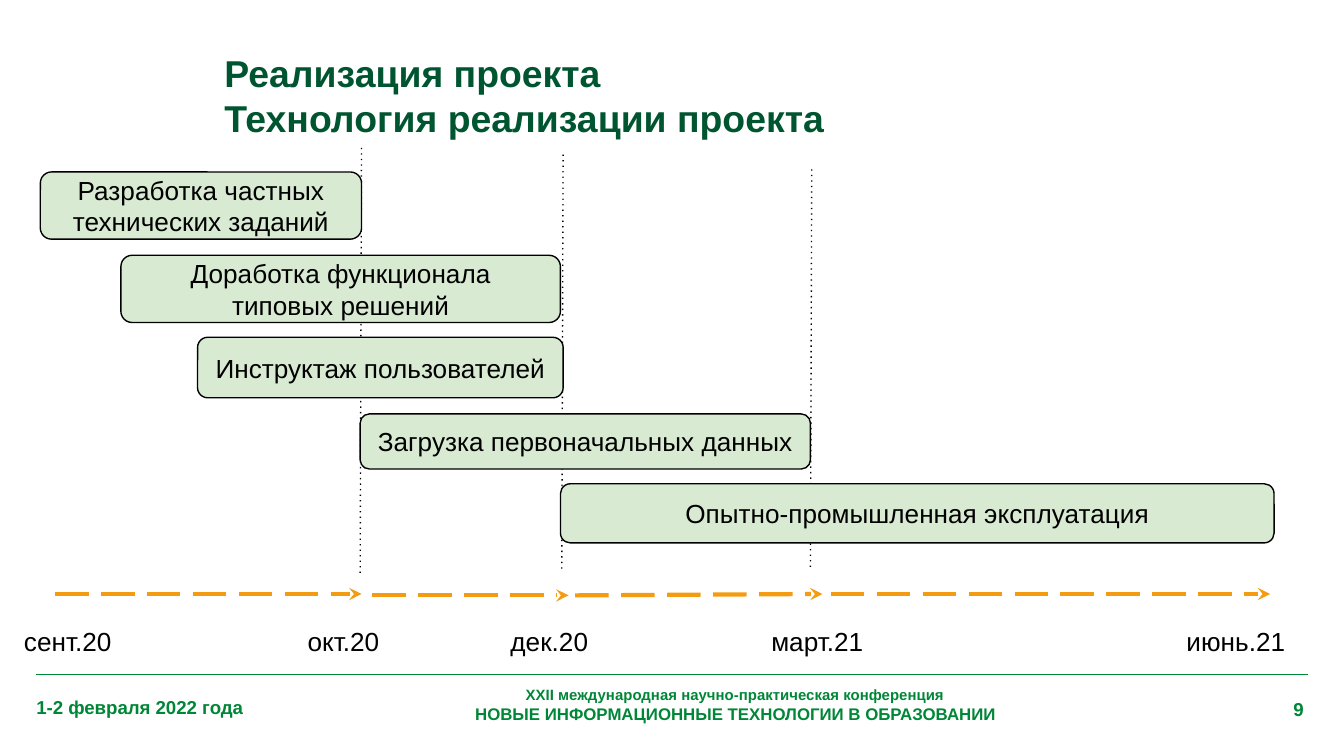
from pptx import Presentation
from pptx.dml.color import RGBColor
from pptx.enum.shapes import MSO_CONNECTOR as Connector, MSO_SHAPE as Shape
from pptx.enum.text import MSO_ANCHOR as Anchor, MSO_AUTO_SIZE as AutoSize, PP_ALIGN as Align
from pptx.oxml.ns import qn
from pptx.util import Inches, Pt
from lxml.etree import SubElement

BLACK, GREEN, DARK_GREEN = "000000", "008637", "005531"
BAR_GREEN, ORANGE = "D9EAD3", "F39C11"

# Stage: text, left, top, width, height
STAGES = [
    ("Разработка частных технических заданий", 0.3, 1.28, 2.39, 0.5),
    ("Доработка функционала типовых решений", 0.9, 1.9, 3.27, 0.5),
    ("Инструктаж пользователей", 1.47, 2.51, 2.72, 0.45),
    ("Загрузка первоначальных данных", 2.68, 3.08, 3.35, 0.41),
    ("Опытно-промышленная эксплуатация", 4.17, 3.6, 5.31, 0.44),
]
# Start and end points
MILESTONES = [
    ((2.69, 1.1), (2.68, 4.27)),
    ((4.19, 1.15), (4.18, 4.26)),
    ((6.04, 1.26), (6.03, 4.23)),
]
PERIODS = [
    ((0.41, 4.42), (2.69, 4.42)),
    ((2.77, 4.43), (4.23, 4.43)),
    ((4.28, 4.43), (6.12, 4.42)),
    ((6.18, 4.42), (9.45, 4.42)),
]
# Month: text, left, width
MONTHS = [
    ("сент.20", 0.08, 0.99),
    ("окт.20", 2.19, 0.99),
    ("дек.20", 3.7, 0.84),
    ("март.21", 5.64, 0.99),
    ("июнь.21", 8.73, 1.04),
]


def rgb(value):
    return RGBColor.from_string(value)


def set_font(font, size, color, bold=False):
    for name, value in {"name": "Arial", "size": Pt(size), "bold": bold}.items():
        setattr(font, name, value)
    font.color.rgb = rgb(color)


def set_frame(frame, anchor=Anchor.TOP, side=0, edge=0, auto_size=AutoSize.NONE):
    values = {
        "word_wrap": True, "auto_size": auto_size, "vertical_anchor": anchor,
        "margin_left": Inches(side), "margin_right": Inches(side),
        "margin_top": Inches(edge), "margin_bottom": Inches(edge),
    }
    for name, value in values.items():
        setattr(frame, name, value)


def add_line(slide, start, end, color, width, dash="solid", arrow=False):
    line = slide.shapes.add_connector(Connector.STRAIGHT, *map(Inches, start + end))
    line.line.color.rgb = rgb(color)
    line.line.width = Pt(width)
    outline = line._element.spPr.find(qn("a:ln"))
    SubElement(outline, qn("a:prstDash"), val=dash)
    if arrow:
        SubElement(outline, qn("a:tailEnd"), type="stealth")
    SubElement(line._element.spPr, qn("a:effectLst"))


def add_text(slide, box, runs, color, bold=False, align=Align.LEFT, anchor=Anchor.TOP, inset=0):
    """Write (text, size) runs, each on its own line of one paragraph."""
    frame = slide.shapes.add_textbox(*map(Inches, box)).text_frame
    set_frame(frame, anchor, inset, inset, AutoSize.SHAPE_TO_FIT_TEXT)
    paragraph = frame.paragraphs[0]
    paragraph.alignment = align
    for index, (text, size) in enumerate(runs):
        if index:
            paragraph.add_line_break()
        run = paragraph.add_run()
        run.text = text
        set_font(run.font, size, color, bold)


def add_stage(slide, text, *box):
    stage = slide.shapes.add_shape(Shape.ROUNDED_RECTANGLE, *map(Inches, box))
    stage.shadow.inherit = False
    stage.fill.solid()
    stage.fill.fore_color.rgb = rgb(BAR_GREEN)
    stage.line.color.rgb = rgb(BLACK)
    stage.line.width = Pt(0.75)
    set_frame(stage.text_frame, Anchor.MIDDLE, 0.1, 0.1)
    paragraph = stage.text_frame.paragraphs[0]
    paragraph.text = text
    paragraph.alignment = Align.CENTER
    set_font(paragraph.font, 14, BLACK)


def fill_title(title, lines):
    title.left, title.top, title.width, title.height = map(Inches, (1.61, 0.37, 7.88, 0.67))
    frame = title.text_frame
    frame.text = "\n".join(lines)
    set_frame(frame, Anchor.MIDDLE, side=0.06, auto_size=AutoSize.SHAPE_TO_FIT_TEXT)
    for paragraph in frame.paragraphs:
        paragraph.alignment = Align.LEFT
        paragraph.line_spacing = 1.0
        paragraph.space_before = Pt(0)
        set_font(paragraph.font, 20, DARK_GREEN, bold=True)


def add_footer(slide):
    add_line(slide, (0.27, 5.02), (9.73, 5.02), GREEN, 0.75)
    add_text(slide, (0.27, 5.18, 1.89, 0.17), [("1-2 февраля 2022 года", 10)],
             GREEN, bold=True, anchor=Anchor.MIDDLE)
    conference = [("XXII международная научно-практическая конференция", 8),
                  ("НОВЫЕ ИНФОРМАЦИОННЫЕ ТЕХНОЛОГИИ В ОБРАЗОВАНИИ", 9)]
    add_text(slide, (1.85, 5.1, 7.24, 0.29), conference, GREEN, bold=True, align=Align.CENTER)
    add_text(slide, (8.86, 5.19, 0.84, 0.17), [("9", 10)], GREEN, bold=True, align=Align.RIGHT)


def main():
    prs = Presentation()
    prs.slide_width = Inches(10)
    prs.slide_height = Inches(10) * 9 // 16
    slide = prs.slides.add_slide(prs.slide_layouts[5])
    fill_title(slide.shapes.title, ["Реализация проекта", "Технология реализации проекта"])
    add_footer(slide)

    # Milestones run behind the stage bars
    for start, end in MILESTONES:
        add_line(slide, start, end, BLACK, 0.75, "dot")
    for stage in STAGES:
        add_stage(slide, *stage)

    # Time axis with its months
    for start, end in PERIODS:
        add_line(slide, start, end, ORANGE, 2.25, "lgDash", arrow=True)
    for month, left, width in MONTHS:
        add_text(slide, (left, 4.55, width, 0.44), [(month, 14)], BLACK, inset=0.1)

    prs.save("out.pptx")


if __name__ == "__main__":
    main()
